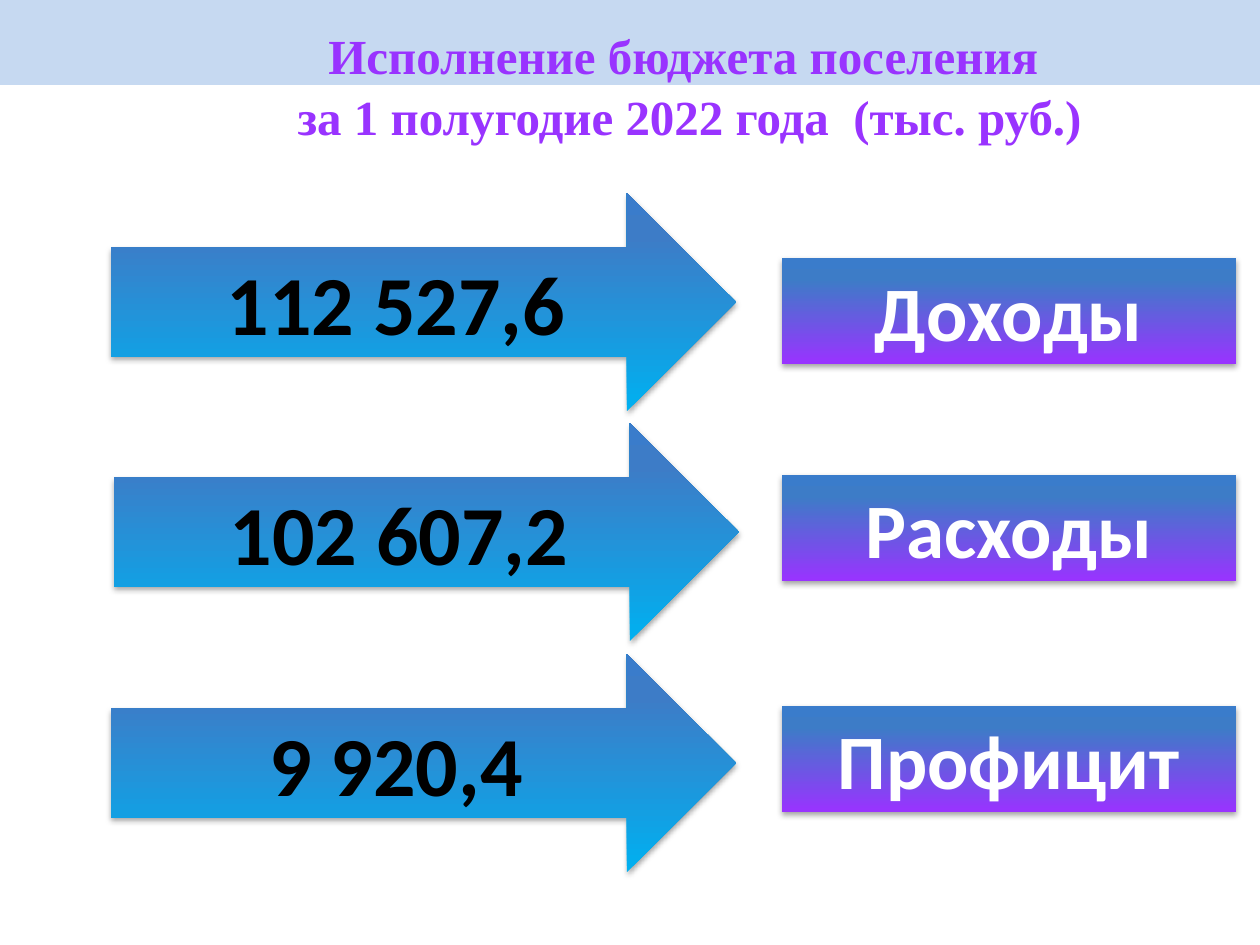
import pptx
import pptx.util
import pptx.dml.color
import pptx.enum.shapes
import pptx.enum.text
import pptx.oxml
import pptx.oxml.ns

SCALE = 914400 / 126
INK = {
    "band": "C6D9F1", "sky": "00B0F0", "blue": "3D7CC7", "top": "3A7CCB",
    "violet": "9933FF", "edge": "467AB8", "black": "000000", "white": "FFFFFF",
}
KINDS = pptx.enum.shapes.MSO_SHAPE
ROWS = [
    (111, 193, "112 527,6", 258, "Доходы"),
    (114, 423, "102 607,2", 475, "Расходы"),
    (111, 654, "9 920,4", 706, "Профицит"),
]
TITLE = ["Исполнение бюджета поселения ", "за 1 полугодие 2022 года  (тыс. руб.)"]


def px(n):
    return pptx.util.Emu(round(n * SCALE))


def rgb(name):
    return pptx.dml.color.RGBColor.from_string(INK[name])


def node(xml):
    head, tail = xml.split(" ", 1)
    return pptx.oxml.parse_xml(f"{head} {pptx.oxml.ns.nsdecls('a')} {tail}")


def write(shape, lines, size, color, font="Calibri", middle=False, space=None, edge=None):
    frame = shape.text_frame
    frame.word_wrap = True
    anchor = pptx.enum.text.MSO_ANCHOR
    frame.vertical_anchor = anchor.MIDDLE if middle else anchor.TOP
    for i, line in enumerate(lines):
        para = frame.add_paragraph() if i else frame.paragraphs[0]
        para.alignment = pptx.enum.text.PP_ALIGN.CENTER
        if space:
            para.line_spacing = space
        run = para.add_run()
        run.text = line
        run.font.name = font
        run.font.size = pptx.util.Pt(size)
        run.font.bold = True
        run.font.color.rgb = rgb(color)
        if edge:
            run.font._element.insert(0, node(
                f'<a:ln w="10541"><a:solidFill><a:srgbClr val="{INK[edge]}"/>'
                '</a:solidFill></a:ln>'))


def block(slide, kind, box):
    shape = slide.shapes.add_shape(kind, *map(px, box))
    shape.line.fill.background()
    shape.shadow.inherit = False
    return shape


def glow(slide, kind, box, base):
    shape = block(slide, kind, box)
    shape.fill.gradient()
    shape.fill.gradient_angle = 90
    props = shape._element.spPr
    stops = props.find(".//" + pptx.oxml.ns.qn("a:gsLst"))
    stops.clear()
    for spot, name in ((0, base), (80, "blue"), (100, "top")):
        stops.append(node(
            f'<a:gs pos="{spot * 1000}"><a:srgbClr val="{INK[name]}"/></a:gs>'))
    props.find(pptx.oxml.ns.qn("a:effectLst")).append(node(
        '<a:outerShdw blurRad="40000" dist="23000" dir="5400000" rotWithShape="0">'
        f'<a:srgbClr val="{INK["black"]}"><a:alpha val="35000"/></a:srgbClr>'
        '</a:outerShdw>'))
    return shape


def header(slide, box):
    left, top, width, height = box
    band = block(slide, KINDS.RECTANGLE, (left, top, width, 85))
    band.fill.solid()
    band.fill.fore_color.rgb = rgb("band")
    title = slide.shapes.add_textbox(
        px(left + 144), px(top + 16), px(width - 169), px(height - 16))
    write(title, TITLE, 28, "violet", font="Times New Roman", space=1.05, edge="edge")


def arrow(slide, box, text):
    shape = glow(slide, KINDS.RIGHT_ARROW, box, "sky")
    write(shape, [text], 48, "black", middle=True)


def label(slide, box, text):
    shape = glow(slide, KINDS.RECTANGLE, box, "violet")
    write(shape, [text], 44, "white")


def main():
    deck = pptx.Presentation()
    deck.slide_width, deck.slide_height = px(1260), px(945)
    slide = deck.slides.add_slide(deck.slide_layouts[6])
    header(slide, (0, 0, 1260, 147))
    for left, top, value, mark, name in ROWS:
        arrow(slide, (left, top, 625, 218), value)
        label(slide, (782, mark, 454, 106), name)
    deck.save("out.pptx")


if __name__ == "__main__":
    main()
